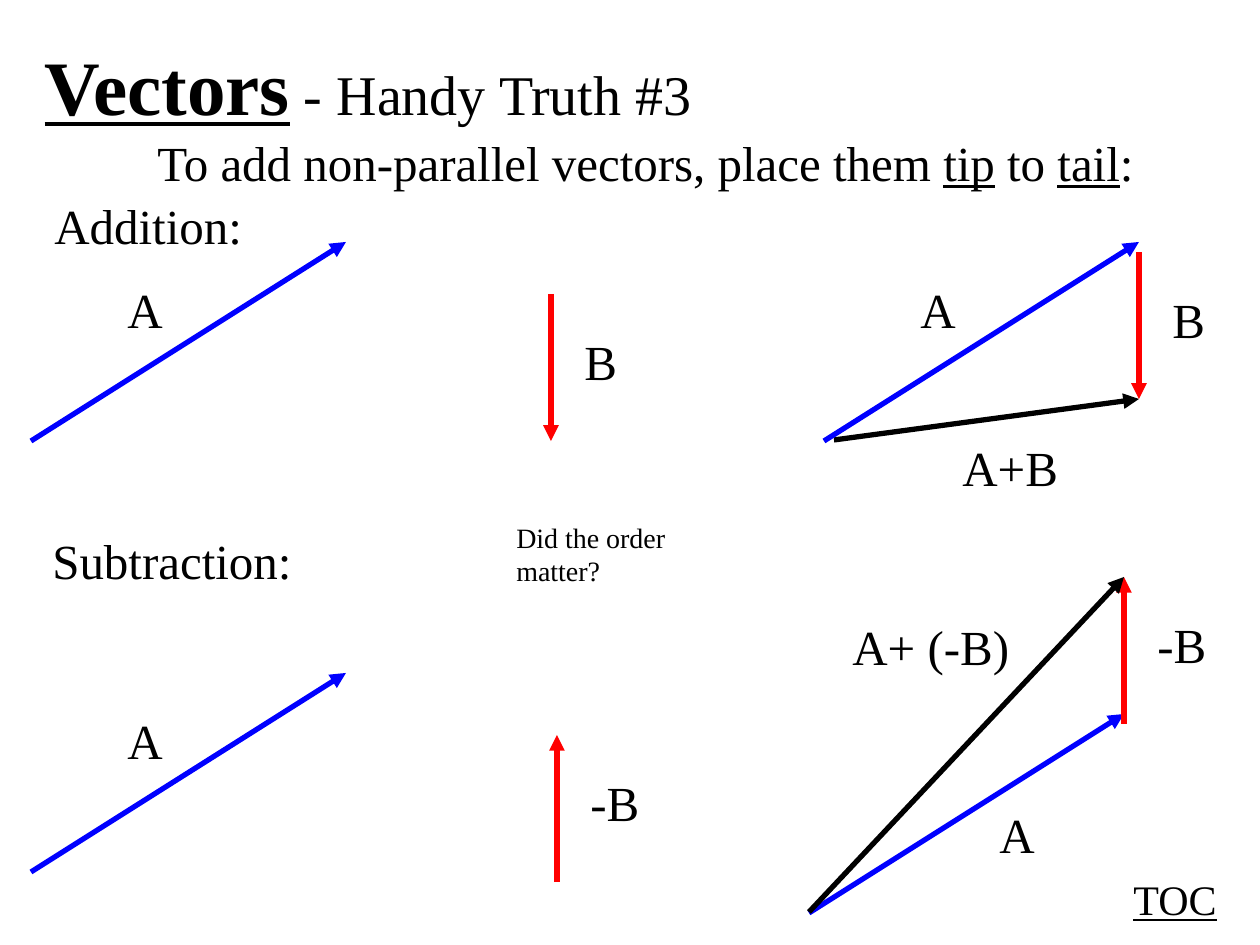
from lxml import etree
from pptx import Presentation, util as u
from pptx.dml.color import RGBColor
from pptx.enum import shapes, text
from pptx.oxml.ns import qn

FONT = "Times New Roman"
BLACK, RED, BLUE = "000000", "FF0000", "0000FF"
LABEL_SIZE, LABEL_HEIGHT = 28, 72

A, B, MINUS_B = (315, -199), (0, 147), (0, -147)
A_LABEL, B_LABEL, MINUS_B_LABEL = (84, -168), (21, 31), (21, -116)

TITLE = ((32, 32, 682, 105), [("Vectors", 44, True, True), (" - Handy Truth #3", 32, False, False)])

# box, wrap, runs as (text, size, bold, underline)
NOTES = [
    ((1121, 867, 110, 63), False, [("TOC", 24, False, True)]),
    ((145, 126, 1005, 72), False, [
        ("To add non-parallel vectors, place them ", 28, False, False),
        ("tip", 28, False, True),
        (" to ", 28, False, False),
        ("tail", 28, False, True),
        (":", 28, False, False),
    ]),
    ((42, 189, 213, 72), False, [("Addition:", 28, False, False)]),
    ((40, 524, 265, 72), False, [("Subtraction:", 28, False, False)]),
    ((504, 514, 252, 81), True, [("Did the order matter?", 16, False, False)]),
]

# tail point, displacement, colour, label, label offset from the tail, label width
VECTORS = [
    ((834, 440), (305, -41), BLACK, "A+B", (116, -9), 121),
    ((1139, 252), B, RED, "B", B_LABEL, 58),
    ((824, 441), A, BLUE, "A", A_LABEL, 60),
    ((31, 441), A, BLUE, "A", A_LABEL, 60),
    ((551, 294), B, RED, "B", B_LABEL, 58),
    ((31, 872), A, BLUE, "A", A_LABEL, 60),
    ((557, 882), MINUS_B, RED, "-B", MINUS_B_LABEL, 74),
    ((809, 913), A, BLUE, "A", (178, -115), 60),
    ((1124, 724), MINUS_B, RED, "-B", MINUS_B_LABEL, 74),
    ((809, 912), (315, -335), BLACK, "A+ (-B)", (31, -302), 183),
]


def px(length):
    return u.Emu(round(length * 914400 / 126))


def colour(value):
    return RGBColor.from_string(value)


def fill_text(shape, runs, wrap=False):
    frame = shape.text_frame
    frame.word_wrap = wrap
    frame.auto_size = text.MSO_AUTO_SIZE.SHAPE_TO_FIT_TEXT
    frame.vertical_anchor = text.MSO_ANCHOR.TOP
    paragraph = frame.paragraphs[0]
    paragraph.alignment = text.PP_ALIGN.LEFT
    for words, size, bold, underline in runs:
        run = paragraph.add_run()
        run.text = words
        run.font.name = FONT
        run.font.size = u.Pt(size)
        run.font.bold = bold
        run.font.underline = underline
        run.font.color.rgb = colour(BLACK)


def add_text(parent, box, runs, wrap=False):
    fill_text(parent.add_textbox(*map(px, box)), runs, wrap)


def add_vector(parent, tail, displacement, line_colour, label, offset, width):
    group = parent.add_group_shape().shapes
    tip = [start + change for start, change in zip(tail, displacement)]
    arrow = group.add_connector(shapes.MSO_CONNECTOR.STRAIGHT, *map(px, (*tail, *tip)))
    arrow.line.color.rgb = colour(line_colour)
    arrow.line.width = u.Pt(3)
    properties = arrow.line._get_or_add_ln()
    etree.SubElement(properties, qn("a:tailEnd"), type="triangle")
    etree.SubElement(properties.getparent(), qn("a:effectLst"))
    corner = [start + change for start, change in zip(tail, offset)]
    add_text(group, (*corner, width, LABEL_HEIGHT), [(label, LABEL_SIZE, False, False)])


def main():
    presentation = Presentation()
    presentation.slide_width, presentation.slide_height = px(1260), px(945)
    slide = presentation.slides.add_slide(presentation.slide_layouts[5])

    box, runs = TITLE
    title = slide.shapes.title
    title.left, title.top, title.width, title.height = map(px, box)
    fill_text(title, runs)

    for vector in VECTORS:
        add_vector(slide.shapes, *vector)
    for box, wrap, runs in NOTES:
        add_text(slide.shapes, box, runs, wrap)

    presentation.save("out.pptx")


if __name__ == "__main__":
    main()
